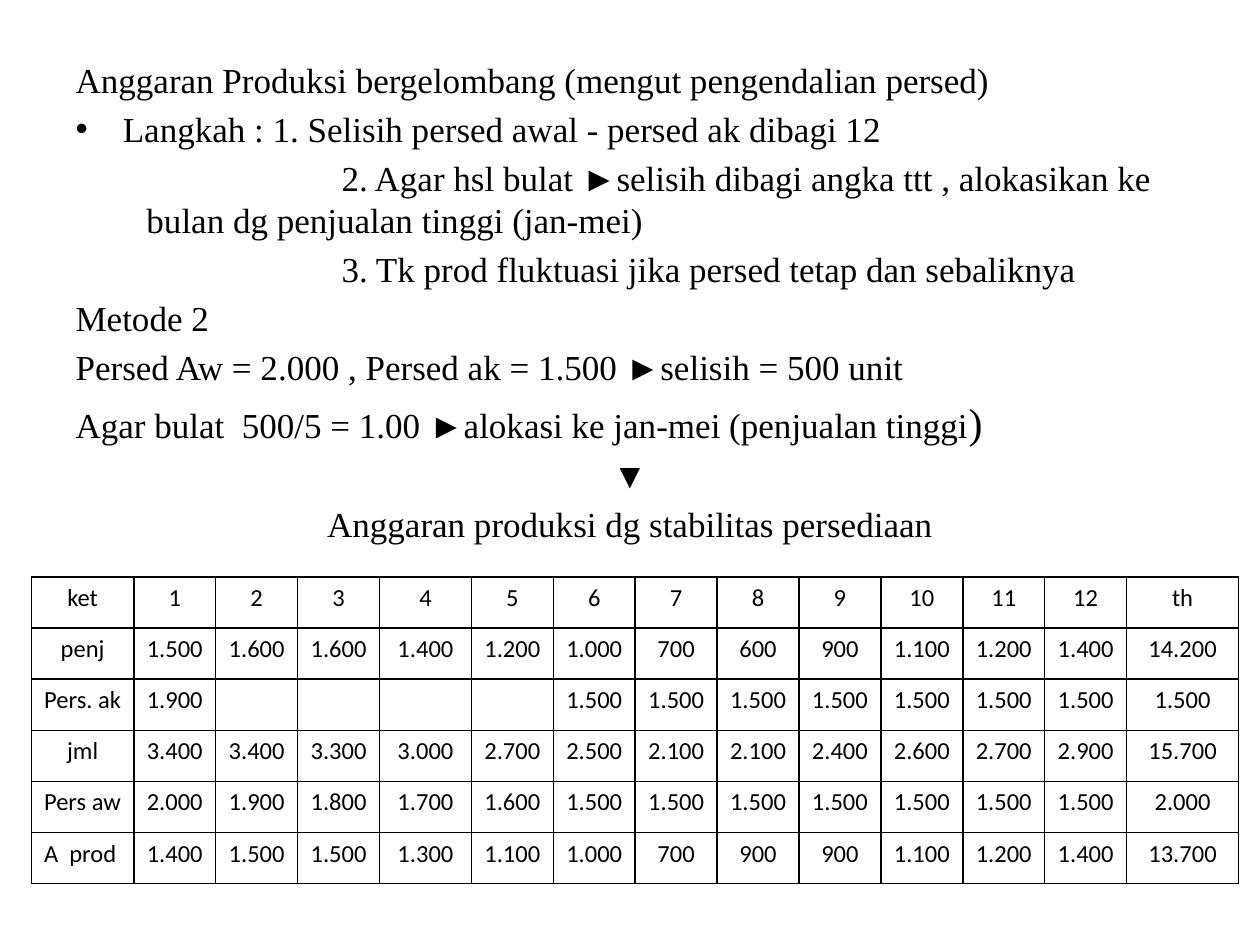
import pptx
import pptx.dml.color
import pptx.enum.text
import pptx.oxml
import pptx.oxml.ns
import pptx.util
from lxml import etree

Pt = pptx.util.Pt
CENTER = pptx.enum.text.PP_ALIGN.CENTER
LEFT = pptx.enum.text.PP_ALIGN.LEFT
qn = pptx.oxml.ns.qn


def color(value):
    return pptx.dml.color.RGBColor.from_string(value)


class PageBuilder:
    ink = "000000"
    body_font, body_size = "Times New Roman", 20
    table_font, table_size = "Calibri", 14
    hanging = (27, -27)

    def __init__(self, deck):
        self.page = deck.slides.add_slide(deck.slide_layouts[1])
        title = self.page.shapes.title
        title.element.getparent().remove(title.element)

    def add_span(self, para, text, font, size):
        span = para.add_run()
        span.text = text
        span.font.name = font
        span.font.size = Pt(size)
        span.font.color.rgb = color(self.ink)

    def place_body(self, left, top, width, height):
        box = self.page.placeholders[1]
        box.left, box.top = Pt(left), Pt(top)
        box.width, box.height = Pt(width), Pt(height)
        self.frame = box.text_frame
        self.frame.auto_size = pptx.enum.text.MSO_AUTO_SIZE.NONE
        self.next_para = self.frame.paragraphs[0]

    def add_line(self, *spans, indent=hanging, align=LEFT, bullet=False):
        """Add a body paragraph; a span is a text or a (text, size) pair."""
        para = self.next_para or self.frame.add_paragraph()
        self.next_para = None
        para.alignment = align
        properties = para._p.get_or_add_pPr()
        margin, first = indent
        properties.set("marL", str(Pt(margin)))
        properties.set("indent", str(Pt(first)))
        if not bullet:
            etree.SubElement(properties, qn("a:buNone"))
        for span in spans:
            text, size = span if isinstance(span, tuple) else (span, self.body_size)
            self.add_span(para, text, self.body_font, size)

    def add_borders(self, cell):
        properties = cell._tc.get_or_add_tcPr()
        for side in ("a:lnL", "a:lnR", "a:lnT", "a:lnB"):
            line = etree.SubElement(properties, qn(side), w=str(Pt(1)))
            fill = etree.SubElement(line, qn("a:solidFill"))
            etree.SubElement(fill, qn("a:srgbClr"), val=self.ink)

    def add_table(self, left, top, widths, row_height, rows, left_labels):
        table = self.page.shapes.add_table(
            len(rows), len(widths), Pt(left), Pt(top),
            Pt(sum(widths)), Pt(row_height * len(rows))).table
        table.first_row = table.horz_banding = False
        for column, width in zip(table.columns, widths):
            column.width = Pt(width)
        for r, values in enumerate(rows):
            table.rows[r].height = Pt(row_height)
            for c, value in enumerate(values):
                cell = table.cell(r, c)
                self.add_borders(cell)
                cell.fill.background()
                if value:
                    para = cell.text_frame.paragraphs[0]
                    para.alignment = LEFT if value in left_labels else CENTER
                    self.add_span(para, value, self.table_font, self.table_size)


def main():
    deck = pptx.Presentation()
    deck.slide_width, deck.slide_height = Pt(720), Pt(540)
    builder = PageBuilder(deck)

    step = (40.5, 111.5)
    builder.place_body(36, 30, 648, 474)
    builder.add_line("Anggaran Produksi bergelombang (mengut pengendalian persed)")
    builder.add_line("Langkah : 1. Selisih persed awal - persed ak dibagi 12", bullet=True)
    builder.add_line("2. Agar hsl bulat ►selisih dibagi angka ttt , alokasikan ke "
                     "bulan dg penjualan tinggi (jan-mei)", indent=step)
    builder.add_line("3. Tk prod fluktuasi jika persed tetap dan sebaliknya", indent=step)
    builder.add_line("Metode 2")
    builder.add_line("Persed Aw = 2.000 , Persed ak = 1.500 ►selisih = 500 unit")
    builder.add_line("Agar bulat  500/5 = 1.00 ►alokasi ke jan-mei (penjualan tinggi", (")", 24))
    builder.add_line("▼", align=CENTER)
    builder.add_line("Anggaran produksi dg stabilitas persediaan", align=CENTER)

    month = 46.8
    widths = [58.5] + [month] * 3 + [52.5] + [month] * 8 + [64]
    rows = [
        ["ket", *(str(number) for number in range(1, 13)), "th"],
        ["penj", "1.500", "1.600", "1.600", "1.400", "1.200", "1.000", "700",
         "600", "900", "1.100", "1.200", "1.400", "14.200"],
        ["Pers. ak", "1.900", *[""] * 4, *["1.500"] * 8],
        ["jml", "3.400", "3.400", "3.300", "3.000", "2.700", "2.500", "2.100",
         "2.100", "2.400", "2.600", "2.700", "2.900", "15.700"],
        ["Pers aw", "2.000", "1.900", "1.800", "1.700", "1.600",
         *["1.500"] * 7, "2.000"],
        ["A  prod", "1.400", "1.500", "1.500", "1.300", "1.100", "1.000", "700",
         "900", "900", "1.100", "1.200", "1.400", "13.700"],
    ]
    builder.add_table(18, 329.7, widths, 29.2, rows, left_labels=("Pers aw", "A  prod"))
    deck.save("out.pptx")


if __name__ == "__main__":
    main()
